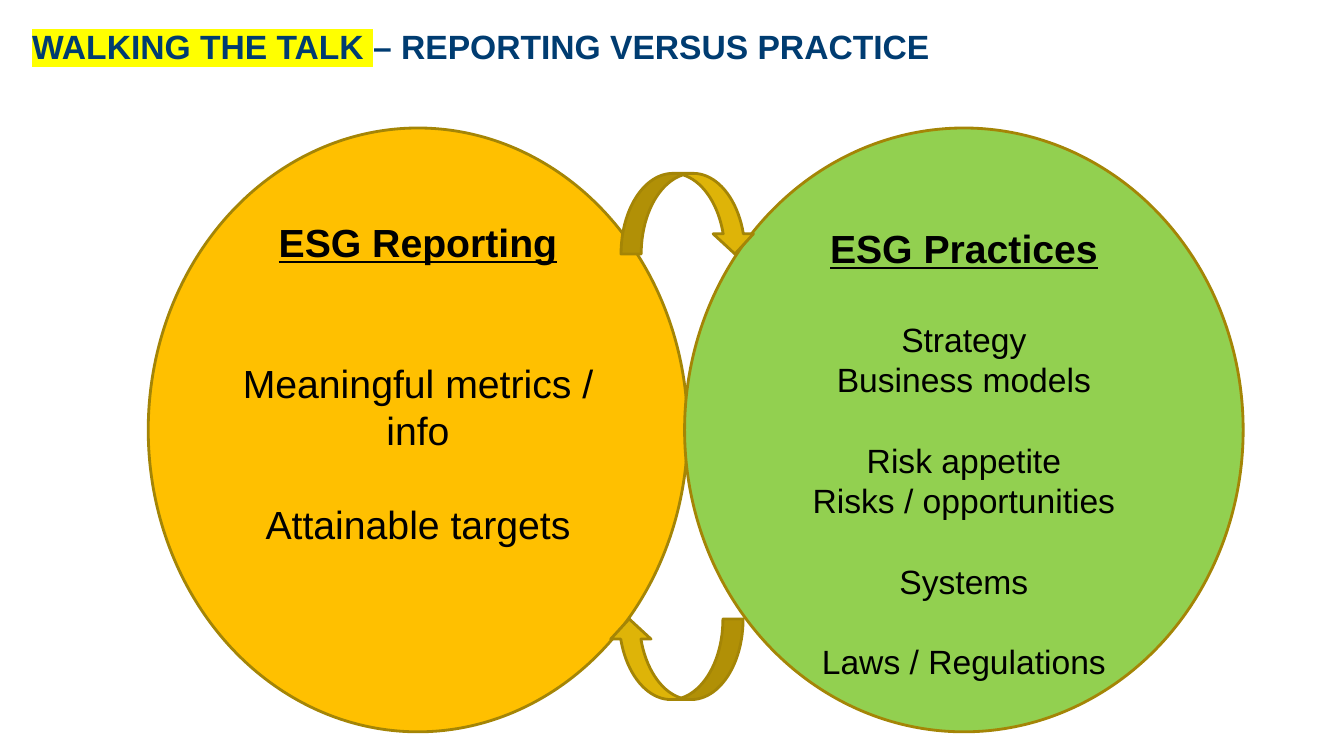
from pptx import Presentation
from pptx.dml.color import RGBColor
from pptx.enum.shapes import MSO_SHAPE
from pptx.enum.text import MSO_ANCHOR, PP_ALIGN
from pptx.oxml import parse_xml
from pptx.oxml.ns import nsdecls
from pptx.util import Inches, Pt

OVAL = MSO_SHAPE.OVAL
ARROW = MSO_SHAPE.CURVED_DOWN_ARROW
TOP = MSO_ANCHOR.TOP
LEFT, CENTER = PP_ALIGN.LEFT, PP_ALIGN.CENTER

NAVY = RGBColor(0x00, 0x3C, 0x71)
BLACK = RGBColor(0x00, 0x00, 0x00)
AMBER = RGBColor(0xFF, 0xC0, 0x00)
GREEN = RGBColor(0x92, 0xD0, 0x50)
GOLD = RGBColor(0xDE, 0xB4, 0x08)
BRONZE = RGBColor(0xA4, 0x85, 0x06)
LEADING = 1.2


def add_text(para, text, size=24, color=BLACK, bold=False, under=False,
             align=CENTER, gap=0, mark=None):
    para.alignment = align
    para.line_spacing = Pt(size * LEADING)
    para.space_before = Pt(gap)
    run = para.add_run()
    run.text = text
    font = run.font
    font.name = "Arial"
    font.size = Pt(size)
    font.bold = bold
    font.underline = under
    font.color.rgb = color
    if mark:
        run._r.get_or_add_rPr().insert(1, parse_xml(
            f'<a:highlight {nsdecls("a")}><a:srgbClr val="{mark}"/></a:highlight>'))


def add_form(kind, left, top, width, height, fill):
    form = slide.shapes.add_shape(
        kind, Inches(left), Inches(top), Inches(width), Inches(height))
    form.shadow.inherit = False
    form.fill.solid()
    form.fill.fore_color.rgb = fill
    form.line.color.rgb = BRONZE
    form.line.width = Pt(2)
    return form


deck = Presentation()
deck.slide_width = Inches(13.33)
deck.slide_height = Inches(7.5)
slide = deck.slides.add_slide(deck.slide_layouts[6])

circles = [
    (1.47, 5.35, AMBER, 0.02, "ESG Reporting", 28, [
        ("Meaningful metrics / info", 2),
        ("Attainable targets", 1),
    ]),
    (6.79, 5.54, GREEN, 0.08, "ESG Practices", 24, [
        ("Strategy", 1.17),
        ("Business models", 0),
        ("Risk appetite", 1),
        ("Risks / opportunities", 0),
        ("Systems", 1),
        ("Laws / Regulations", 1),
    ]),
]
for left, width, fill, inset, head, size, items in circles:
    frame = add_form(OVAL, left, 1.27, width, 5.99, fill).text_frame
    frame.word_wrap = True
    frame.vertical_anchor = TOP
    frame.margin_top = Inches(inset)
    add_text(frame.paragraphs[0], head, size=28, bold=True, under=True)
    for text, lines in items:
        add_text(frame.add_paragraph(), text, size=size,
                 gap=lines * size * LEADING)

for left, top, turn in [(6.16, 1.72, 0), (6.04, 6.14, 180)]:
    add_form(ARROW, left, top, 1.33, 0.8, GOLD).rotation = turn

title = slide.shapes.add_textbox(
    Inches(0.22), Inches(0.21), Inches(9.99), Inches(0.5)).text_frame
title.word_wrap = True
for text, mark in [("WALKING THE TALK ", "FFFF00"),
                   ("– REPORTING VERSUS PRACTICE", None)]:
    add_text(title.paragraphs[0], text, color=NAVY, bold=True,
             align=LEFT, mark=mark)

deck.save("out.pptx")
